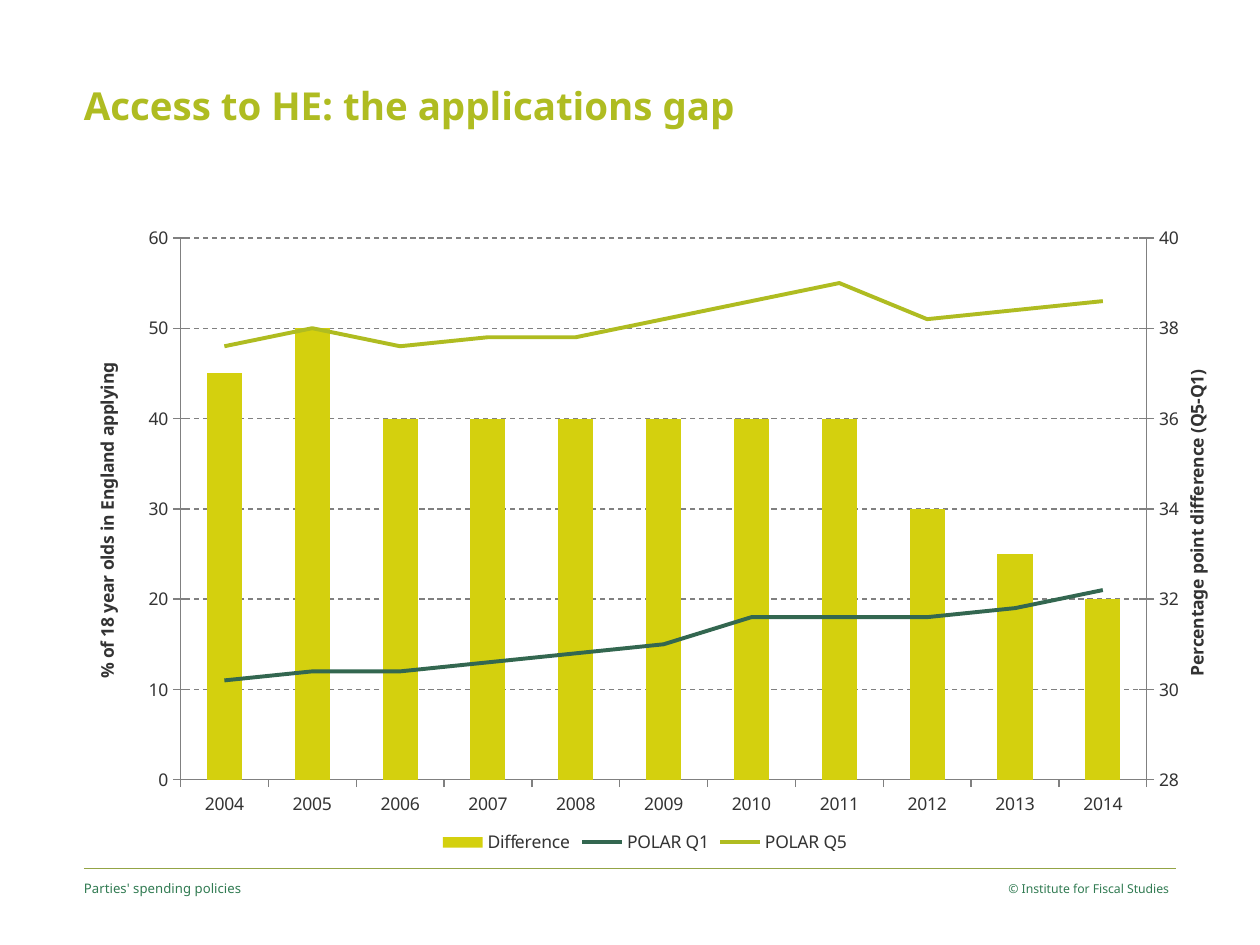
from copy import deepcopy

from lxml import etree
from pptx import Presentation
from pptx.chart.axis import CategoryAxis, ValueAxis
from pptx.chart.data import CategoryChartData
from pptx.dml.color import RGBColor
from pptx.enum import chart as charts, dml, shapes, text
from pptx.oxml import ns, parse_xml
from pptx.util import Pt

FONT = "Noto Sans"
COLOURS = {
    "title": "AFBC21", "footer": "317B52", "rule": "93A445", "text": "333333",
    "axis": "808080", "Difference": "D4D00E", "POLAR Q1": "336750", "POLAR Q5": "AFBC21",
}
YEARS = [str(year) for year in range(2004, 2015)]
SERIES = {
    "Difference": [37, 38, 36, 36, 36, 36, 36, 36, 34, 33, 32],
    "POLAR Q1": [11, 12, 12, 13, 14, 15, 18, 18, 18, 19, 21],
    "POLAR Q5": [48, 50, 48, 49, 49, 51, 53, 55, 51, 52, 53],
}


def colour(name):
    """Return the named colour."""
    return RGBColor.from_string(COLOURS[name])


def style_font(font, size, name, bold=False):
    """Set the face, size, colour and weight of a font."""
    font.name, font.size, font.bold = FONT, Pt(size), bold
    font.color.rgb = colour(name)


def add_label(slide, box, words, size, name, bold=False, align=text.PP_ALIGN.LEFT, inset=0):
    """Add one line of text in a box, with an inset on the right."""
    frame = slide.shapes.add_textbox(*map(Pt, box)).text_frame
    frame.word_wrap = True
    frame.margin_left = frame.margin_top = frame.margin_bottom = 0
    frame.margin_right = Pt(inset)
    paragraph = frame.paragraphs[0]
    paragraph.text, paragraph.alignment = words, align
    style_font(paragraph.font, size, name, bold)


def add_footer(slide, box):
    """Draw the rule with the talk's name on the left and copyright on the right."""
    left, top, width, height = box
    rule = slide.shapes.add_connector(
        shapes.MSO_CONNECTOR.STRAIGHT, Pt(left), Pt(top), Pt(left + width), Pt(top))
    rule.line.color.rgb = colour("rule")
    rule.line.width = Pt(0.75)
    etree.SubElement(rule._element.spPr, ns.qn("a:effectLst"))
    half = width / 2
    add_label(slide, (left, top + 7, half, height - 7),
              "Parties' spending policies", 7.5, "footer")
    add_label(slide, (left + half, top + 7, half, height - 7),
              "© Institute for Fiscal Studies", 7, "footer",
              align=text.PP_ALIGN.RIGHT, inset=4)


def chart_xml(body):
    """Parse a chart fragment."""
    return parse_xml(body.replace(">", f" {ns.nsdecls('c')}>", 1))


def layout(x, y, size=""):
    """Return a manual layout at chart fractions."""
    return chart_xml(
        '<c:layout><c:manualLayout>' + ('<c:layoutTarget val="inner"/>' if size else "")
        + '<c:xMode val="edge"/><c:yMode val="edge"/>'
        + f'<c:x val="{x}"/><c:y val="{y}"/>{size}</c:manualLayout></c:layout>')


def move_lines(chart):
    """Move every series but the first to lines and return both value axes."""
    plot_area = chart._chartSpace.chart.plotArea
    bars = plot_area.find(ns.qn("c:barChart"))
    lines = chart_xml(
        '<c:lineChart><c:grouping val="standard"/><c:varyColors val="0"/>'
        '<c:marker val="1"/><c:axId val="1001"/><c:axId val="1002"/></c:lineChart>')
    for series in bars.findall(ns.qn("c:ser"))[1:]:
        for invert in series.findall(ns.qn("c:invertIfNegative")):
            series.remove(invert)
        lines.find(ns.qn("c:marker")).addprevious(series)
    bars.addnext(lines)
    pairs = (("c:catAx", "1001", "1002"), ("c:valAx", "1002", "1001"))
    primary = [plot_area.find(ns.qn(tag)) for tag, _, _ in pairs]
    second = [deepcopy(axis) for axis in primary]
    for axis, (_, own, other) in zip(second, pairs):
        axis.find(ns.qn("c:axId")).set("val", own)
        axis.find(ns.qn("c:crossAx")).set("val", other)
    primary[1].addnext(second[1])
    second[1].addnext(second[0])
    primary[1].find(ns.qn("c:axPos")).set("val", "r")
    primary[1].find(ns.qn("c:crosses")).set("val", "max")
    CategoryAxis(second[0]).visible = False
    return ValueAxis(primary[1]), ValueAxis(second[1])


def style_axis(axis, tick):
    """Set the line, ticks and labels of an axis."""
    axis.format.line.color.rgb = colour("axis")
    axis.format.line.width = Pt(0.75)
    axis.major_tick_mark = tick
    axis.minor_tick_mark = charts.XL_TICK_MARK.NONE
    style_font(axis.tick_labels.font, 10, "text")


def style_scale(axis, title, scale, place):
    """Set the scale and rotated title of a value axis."""
    style_axis(axis, charts.XL_TICK_MARK.CROSS)
    axis.minimum_scale, axis.maximum_scale, axis.major_unit = scale
    axis.tick_labels.number_format = "0"
    axis.tick_labels.number_format_is_linked = False
    axis.has_major_gridlines = False
    frame = axis.axis_title.text_frame
    frame.text = title
    style_font(frame.paragraphs[0].font, 10, "text", True)
    frame._txBody.find(ns.qn("a:bodyPr")).set("rot", "-5400000")
    element = axis.axis_title._element
    for old in element.findall(ns.qn("c:layout")):
        element.remove(old)
    element.find(ns.qn("c:tx")).addnext(layout(*place))


def add_gap_chart(slide, box):
    """Add the gap as columns and both application rates as lines."""
    data = CategoryChartData(number_format="0")
    data.categories = YEARS
    for name, values in SERIES.items():
        data.add_series(name, values)
    chart = slide.shapes.add_chart(
        charts.XL_CHART_TYPE.COLUMN_CLUSTERED, *map(Pt, box), data).chart
    style_font(chart.font, 10, "text")
    chart.has_title = False
    chart.has_legend = True
    chart.legend.position = charts.XL_LEGEND_POSITION.BOTTOM
    chart.legend.include_in_layout = False
    style_font(chart.legend.font, 10, "text")

    gap_axis, rate_axis = move_lines(chart)
    style_axis(chart.category_axis, charts.XL_TICK_MARK.OUTSIDE)
    style_scale(gap_axis, "Percentage point difference (Q5-Q1)", (28, 40, 2), (0.969, 0.28))
    style_scale(rate_axis, "% of 18 year olds in England applying", (0, 60, 10), (0.014, 0.27))
    grid = gap_axis.major_gridlines.format.line
    grid.color.rgb = colour("axis")
    grid.width = Pt(0.75)
    grid.dash_style = dml.MSO_LINE.DASH

    columns, rates = chart.plots
    columns.gap_width = 150
    columns.vary_by_categories = False
    fill = columns.series[0].format.fill
    fill.solid()
    fill.fore_color.rgb = colour("Difference")
    for rate in rates.series:
        rate.smooth = False
        rate.marker.style = charts.XL_MARKER_STYLE.NONE
        rate.format.line.color.rgb = colour(rate.name)
        rate.format.line.width = Pt(2.25)

    plot_area = chart._chartSpace.chart.plotArea
    for old in plot_area.findall(ns.qn("c:layout")):
        plot_area.remove(old)
    plot_area.insert(0, layout(0.093, 0.092, '<c:w val="0.847"/><c:h val="0.792"/>'))


def main():
    """Build and save the slide."""
    deck = Presentation()
    deck.slide_width, deck.slide_height = Pt(720), Pt(540)
    slide = deck.slides.add_slide(deck.slide_layouts[6])
    add_label(slide, (48, 46.8, 516, 32), "Access to HE: the applications gap",
              22, "title", True)
    add_gap_chart(slide, (42.5, 100, 652, 391))
    add_footer(slide, (48, 496.3, 624, 36))
    deck.save("out.pptx")


if __name__ == "__main__":
    main()
